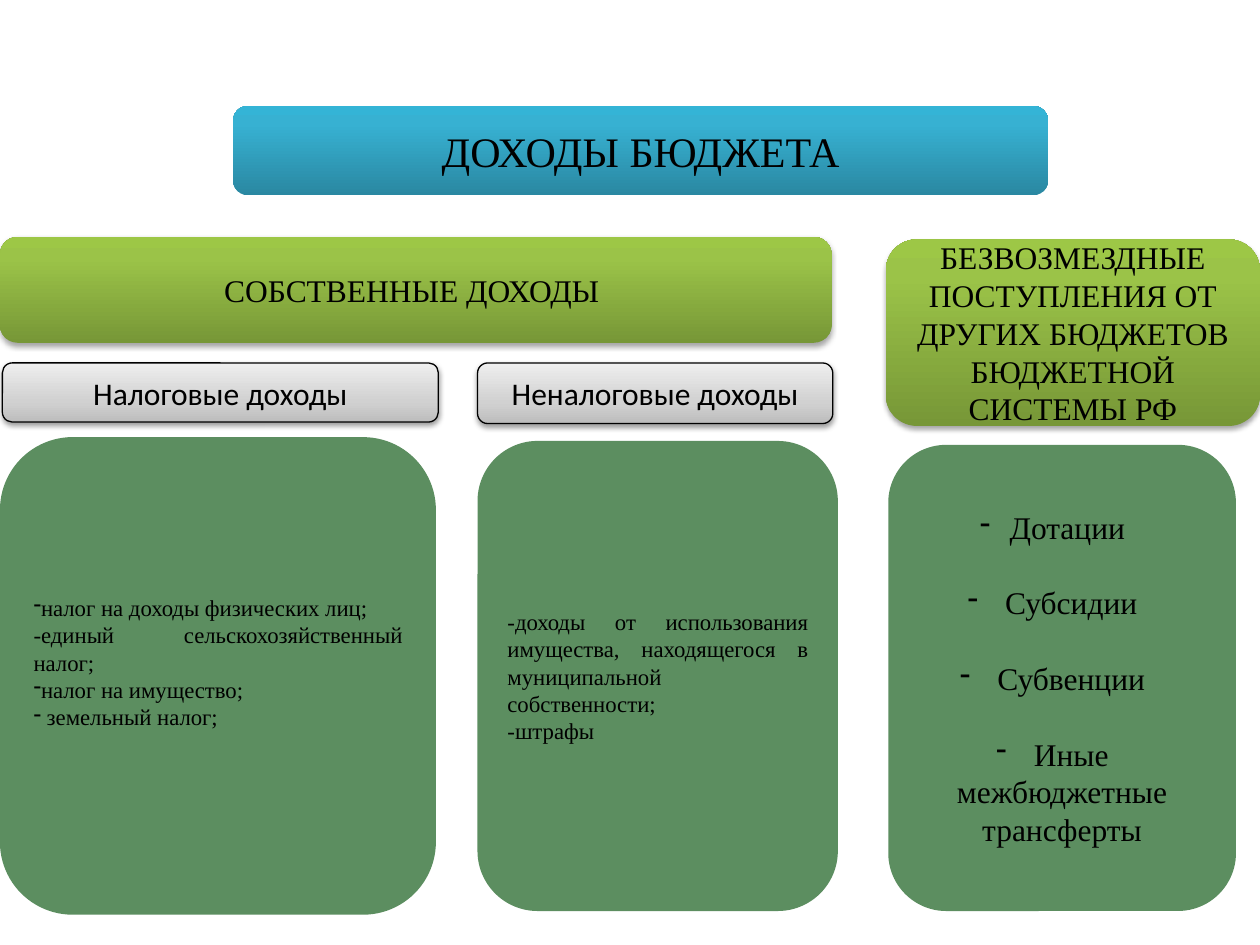
from lxml import etree
from pptx import Presentation
from pptx.dml.color import RGBColor
from pptx.enum.shapes import MSO_SHAPE
from pptx.enum.text import MSO_ANCHOR, PP_ALIGN
from pptx.oxml.ns import qn
from pptx.util import Pt

ROUND = MSO_SHAPE.ROUNDED_RECTANGLE
MIDDLE = MSO_ANCHOR.MIDDLE
CENTER, JUSTIFY = PP_ALIGN.CENTER, PP_ALIGN.JUSTIFY

THEME = {
    "ink": "000000",
    "serif": "Times New Roman",
    "sans": "Calibri",
    "title": 24,
    "head": 18,
    "body": 13,
    "panel": "5C8E60",
    "blue": [(0, "2A88A2"), (80, "37B1D2"), (100, "34B4D6")],
    "green": [(0, "779737"), (80, "9BC348"), (100, "9DC746")],
    "gray": [(0, "BDBDBD"), (35, "D1D1D1"), (100, "EEEEEE")],
}
# Shadow: opacity in percent, blur and distance in points
STYLES = {
    "title": dict(fill="blue", font="serif", size="title"),
    "group": dict(fill="green", font="serif", size="head", shade=(35, 3.1, 1.8)),
    "kind": dict(fill="gray", font="sans", size="head", line=0.75,
                 shade=(38, 3.1, 1.6)),
    "list": dict(fill="panel", font="serif", size="body", align=JUSTIFY),
    "grants": dict(fill="panel", font="serif", size="head", gap=21.6),
}

# Style, (left, top, width, height), paragraphs as (bulleted, text)
BOXES = [
    ("title", (133.2, 60.5, 465.8, 51.1), [(False, "ДОХОДЫ БЮДЖЕТА")]),
    ("group", (0, 135.4, 475.2, 60.5), [(False, "СОБСТВЕННЫЕ ДОХОДЫ ")]),
    ("kind", (272.9, 207.4, 203, 34.6), [(False, "Неналоговые доходы")]),
    ("kind", (1.4, 207.4, 249.1, 33.8), [(False, "Налоговые доходы")]),
    ("group", (506.2, 136.8, 213.8, 106.6), [
        (False, "БЕЗВОЗМЕЗДНЫЕ ПОСТУПЛЕНИЯ ОТ ДРУГИХ БЮДЖЕТОВ "
                "БЮДЖЕТНОЙ СИСТЕМЫ РФ")]),
    ("list", (0, 249.8, 249.1, 272.9), [
        (True, "налог на доходы физических лиц;"),
        (False, "-единый сельскохозяйственный налог;"),
        (True, "налог на имущество;"),
        (True, " земельный налог;")]),
    ("list", (272.9, 252, 205.9, 268.6), [
        (False, "-доходы от использования имущества, находящегося "
                "в муниципальной собственности;"),
        (False, "-штрафы")]),
    ("grants", (507.6, 254.2, 198.7, 266.4), [
        (True, "Дотации"),
        (True, " Субсидии"),
        (True, " Субвенции"),
        (True, " Иные межбюджетные трансферты")]),
]
TAXES = 5       # this list sits above the middle of its box
LIFT = 19.2


def node(parent, tag, **attrs):
    return etree.SubElement(parent, qn(tag), attrs)


def tint(parent, color):
    return node(parent, "a:srgbClr", val=color)


def paint(shape, fill):
    """Fill with one colour, or with stops that run from bottom to top."""
    if isinstance(fill, str):
        shape.fill.solid()
        shape.fill.fore_color.rgb = RGBColor.from_string(fill)
        return
    shape.fill.gradient()
    shape.fill.gradient_angle = 90
    stops = shape._element.spPr.find(qn("a:gradFill")).find(qn("a:gsLst"))
    for old in list(stops):
        stops.remove(old)
    for place, color in fill:
        tint(node(stops, "a:gs", pos=str(place * 1000)), color)


def cast(shape, alpha, blur, dist):
    effects = shape._element.spPr.find(qn("a:effectLst"))
    shadow = node(effects, "a:outerShdw", blurRad=str(Pt(blur)),
                  dist=str(Pt(dist)), dir="5400000", rotWithShape="0")
    node(tint(shadow, THEME["ink"]), "a:alpha", val=str(alpha * 1000))


def write(frame, items, font, size, align=CENTER, gap=0):
    frame.word_wrap = True
    frame.vertical_anchor = MIDDLE
    frame.text = "\n".join(text for _, text in items)
    for i, (para, (dash, _)) in enumerate(zip(frame.paragraphs, items)):
        para.alignment = align
        if gap and i:
            para.space_before = Pt(gap)
        if dash:
            props = para._p.get_or_add_pPr()
            node(props, "a:buFontTx")
            node(props, "a:buChar", char="-")
        for run in para.runs:
            run.font.name = THEME[font]
            run.font.size = Pt(THEME[size])
            run.font.color.rgb = RGBColor.from_string(THEME["ink"])


def box(slide, place, items, fill, line=None, shade=None, **text):
    shape = slide.shapes.add_shape(ROUND, *map(Pt, place))
    paint(shape, THEME[fill])
    if line:
        shape.line.width = Pt(line)
        shape.line.color.rgb = RGBColor.from_string(THEME["ink"])
    else:
        shape.line.fill.background()
    shape.shadow.inherit = False
    if shade:
        cast(shape, *shade)
    write(shape.text_frame, items, **text)
    return shape


def main():
    deck = Presentation()
    deck.slide_width, deck.slide_height = Pt(720), Pt(540)
    slide = deck.slides.add_slide(deck.slide_layouts[6])
    shapes = [box(slide, place, items, **STYLES[style])
              for style, place, items in BOXES]
    shapes[TAXES].text_frame.margin_bottom = Pt(LIFT)
    deck.save("out.pptx")


if __name__ == "__main__":
    main()
